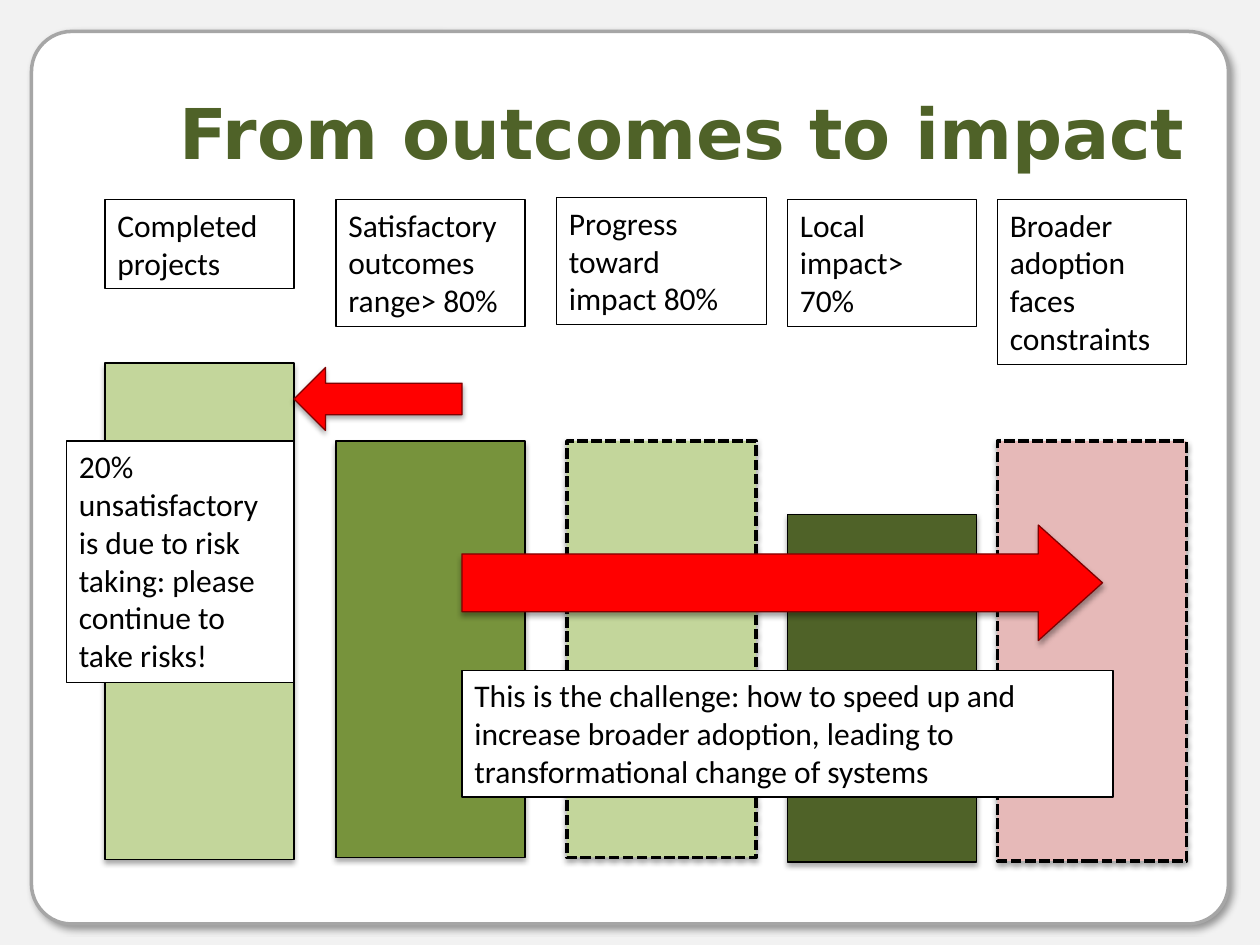
from lxml import etree
from pptx import Presentation
from pptx import util as u
from pptx.dml.color import RGBColor
from pptx.enum import dml, shapes, text
from pptx.oxml import ns

Pt = u.Pt
KIND = shapes.MSO_SHAPE

# Content
TITLE = "From outcomes to impact"
BAR_WIDTH = 108
# left, top, height, fill, dashed outline
BARS = [
    (60, 207.5, 283.5, "C3D69B", False),
    (192, 252, 238, "77933C", False),
    (450, 294, 198.5, "4F6228", False),
    (570, 252, 240, "E6B9B8", True),
    (324, 252, 238, "C3D69B", True),
]
# text, left, top, width, height
LABELS = [
    ("Completed projects", 60, 114, 108, 51),
    ("Satisfactory outcomes range> 80%", 192, 114, 108, 72.5),
    ("Progress toward impact 80%", 318, 113, 120, 72.5),
    ("Local impact> 70%", 450, 114, 108, 72.5),
    ("Broader adoption faces constraints", 570, 114, 108, 94.5),
]
RISK_NOTE = ("20% unsatisfactory is due to risk taking: please continue to "
             "take risks!", 38, 252, 130, 138)
CHALLENGE_NOTE = ("This is the challenge: how to speed up and increase broader "
                  "adoption, leading to transformational change of systems",
                  264, 383, 372, 72.5)


def color(value):
    return RGBColor.from_string(value)


def add_shadow(shape, alpha, blur, distance, angle):
    effects = etree.SubElement(shape.element.spPr, ns.qn("a:effectLst"))
    shadow = etree.SubElement(
        effects, ns.qn("a:outerShdw"), blurRad=str(Pt(blur)),
        dist=str(Pt(distance)), dir=str(angle * 60000), rotWithShape="0")
    tint = etree.SubElement(shadow, ns.qn("a:srgbClr"), val="000000")
    etree.SubElement(tint, ns.qn("a:alpha"), val=str(alpha * 1000))


def add_box(page, kind, left, top, width, height, fill=None,
            line="000000", weight=0.75, shadow=None):
    box = page.shapes.add_shape(kind, Pt(left), Pt(top), Pt(width), Pt(height))
    if fill:
        box.fill.solid()
        box.fill.fore_color.rgb = color(fill)
    else:
        box.fill.background()
    box.line.color.rgb = color(line)
    box.line.width = Pt(weight)
    if shadow:
        add_shadow(box, *shadow)
    else:
        box.shadow.inherit = False
    return box


def format_text(frame, align, anchor, font, size, ink, bold=False):
    frame.word_wrap = True
    frame.vertical_anchor = anchor
    para = frame.paragraphs[0]
    para.alignment = align
    for span in para.runs:
        span.font.name = font
        span.font.size = Pt(size)
        span.font.bold = bold
        span.font.color.rgb = color(ink)


def add_text_box(page, words, left, top, width, height, fill=None):
    box = add_box(page, KIND.RECTANGLE, left, top, width, height, fill)
    frame = box.text_frame
    frame.text = words
    format_text(frame, text.PP_ALIGN.LEFT, text.MSO_ANCHOR.TOP,
                "Calibri", 18, "000000")
    frame.auto_size = text.MSO_AUTO_SIZE.SHAPE_TO_FIT_TEXT


def add_arrow(page, left, top, width, height):
    return add_box(page, KIND.LEFT_ARROW, left, top, width, height,
                   "FF0000", "800000", shadow=SOFT_SHADOW)


# alpha, blur, distance, angle
SOFT_SHADOW = (35, 3.1, 1.8, 90)
CARD_SHADOW = (40, 4, 3, 45)


def main():
    deck = Presentation()
    deck.slide_width, deck.slide_height = Pt(720), Pt(540)
    page = deck.slides.add_slide(deck.slide_layouts[5])
    page.background.fill.solid()
    page.background.fill.fore_color.rgb = color("F2F2F2")

    # Card behind the title
    title = page.shapes.title
    card = add_box(page, KIND.ROUNDED_RECTANGLE, 18, 18, 684, 510,
                   "FFFFFF", "A6A6A6", 2, CARD_SHADOW)
    card.adjustments[0] = 0.045
    title.element.addprevious(card.element)

    # Title
    title.left, title.top, title.width, title.height = map(Pt, (36, 30, 648, 90))
    title.text_frame.text = TITLE
    format_text(title.text_frame, text.PP_ALIGN.RIGHT, text.MSO_ANCHOR.MIDDLE,
                "DejaVu Sans", 40, "4F6228", bold=True)

    # Bars and their labels
    for left, top, height, fill, dashed in BARS:
        bar = add_box(page, KIND.RECTANGLE, left, top, BAR_WIDTH, height, fill,
                      weight=2 if dashed else 0.75, shadow=SOFT_SHADOW)
        if dashed:
            bar.line.dash_style = dml.MSO_LINE.SQUARE_DOT
    for label in LABELS:
        add_text_box(page, *label)

    # Arrows and notes
    add_arrow(page, 168, 210, 96, 36)
    add_text_box(page, *RISK_NOTE, fill="FFFFFF")
    forward = add_arrow(page, 264, 300, 366, 66)
    forward.rotation = 180
    forward.adjustments[1] = 0.556
    add_text_box(page, *CHALLENGE_NOTE, fill="FFFFFF")

    deck.save("out.pptx")


if __name__ == "__main__":
    main()
